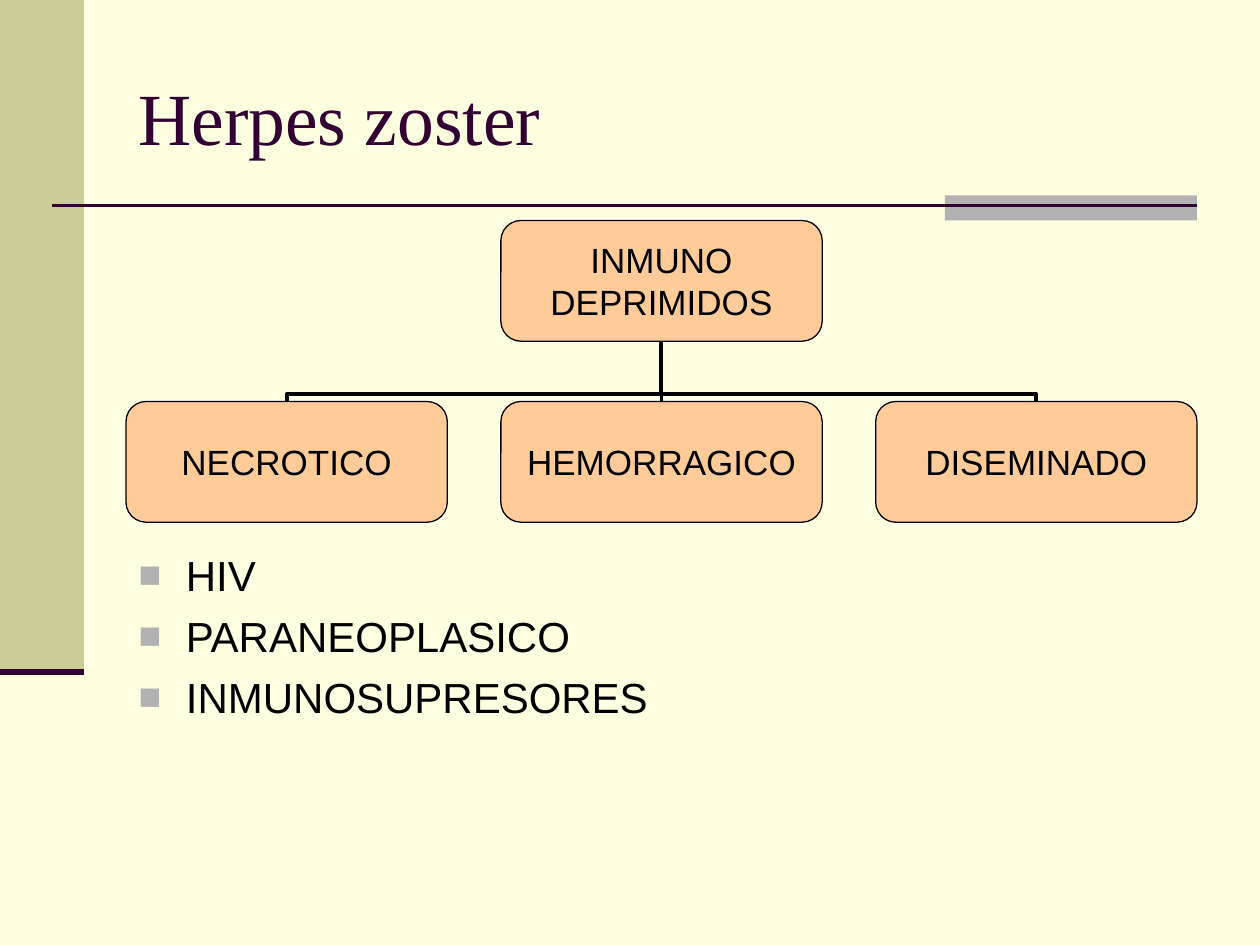
"""Build the Herpes zoster slide with its hierarchy of clinical forms."""
from dataclasses import dataclass

import lxml.etree
import pptx
import pptx.dml.color
import pptx.enum.shapes
import pptx.enum.text
import pptx.oxml.ns
import pptx.util

Pt = pptx.util.Pt
qn = pptx.oxml.ns.qn
Shapes = pptx.enum.shapes.MSO_SHAPE
Connectors = pptx.enum.shapes.MSO_CONNECTOR
Align = pptx.enum.text.PP_ALIGN
Anchor = pptx.enum.text.MSO_ANCHOR


@dataclass(frozen=True)
class Theme:
    """Colours, fonts and type sizes of the slide."""
    background: str = "FFFFE1"
    band: str = "CCCC99"
    accent: str = "B2B2B2"
    plum: str = "330033"
    node: str = "FFCC99"
    ink: str = "000000"
    title_font: str = "Times New Roman"
    body_font: str = "Arial"
    title_size: int = 42
    node_size: int = 20
    list_size: int = 24


@dataclass(frozen=True)
class Box:
    """A rectangle in points."""
    left: float
    top: float
    width: float
    height: float

    @property
    def center(self):
        """Return the horizontal centre."""
        return self.left + self.width / 2

    @property
    def bottom(self):
        """Return the lower edge."""
        return self.top + self.height

    def lengths(self):
        """Return the four measures as lengths."""
        return [Pt(v) for v in (self.left, self.top, self.width, self.height)]


THEME = Theme()


def rgb(value):
    """Turn a hex string into a colour."""
    return pptx.dml.color.RGBColor.from_string(value)


def add_span(para, text, font, size, color):
    """Add one formatted run to a paragraph."""
    span = para.add_run()
    span.text = text
    span.font.name = font
    span.font.size = Pt(size)
    span.font.color.rgb = rgb(color)


def add_block(page, kind, box, fill, line=None):
    """Add a filled shape with an optional thin outline."""
    block = page.shapes.add_shape(kind, *box.lengths())
    block.shadow.inherit = False
    block.fill.solid()
    block.fill.fore_color.rgb = rgb(fill)
    if line:
        block.line.color.rgb = rgb(line)
        block.line.width = Pt(0.75)
    else:
        block.line.fill.background()
    return block


def add_line(page, kind, start, end, color, width):
    """Add a connector without a shadow."""
    line = page.shapes.add_connector(kind, *[Pt(v) for v in (*start, *end)])
    line.line.color.rgb = rgb(color)
    line.line.width = Pt(width)
    lxml.etree.SubElement(line._element.spPr, qn("a:effectLst"))
    return line


def add_branch(page, child, parent):
    """Link the top of a child node to the bottom of its parent."""
    drop = child.top - parent.bottom
    span = abs(child.center - parent.center)
    if span < 1:
        add_line(page, Connectors.STRAIGHT, (child.center, child.top),
                 (parent.center, parent.bottom), THEME.ink, 2.25)
        return
    side = 1 if child.center > parent.center else -1
    x = (child.center + parent.center) / 2
    y = (child.top + parent.bottom) / 2
    elbow = add_line(page, Connectors.ELBOW, (x + side * drop / 2, y - span / 2),
                     (x - side * drop / 2, y + span / 2), THEME.ink, 2.25)
    properties = elbow._element.spPr
    properties.find(qn("a:xfrm")).set("rot", str((90 if side > 0 else 270) * 60000))
    guides = properties.find(qn("a:prstGeom")).get_or_add_avLst()
    lxml.etree.SubElement(guides, qn("a:gd"), name="adj1", fmla="val 12800")


def add_node(page, box, lines):
    """Add one rounded node with centred lines of text."""
    frame = add_block(page, Shapes.ROUNDED_RECTANGLE, box, THEME.node, THEME.ink).text_frame
    frame.word_wrap = False
    frame.vertical_anchor = Anchor.MIDDLE
    frame.margin_left = frame.margin_right = frame.margin_top = frame.margin_bottom = 0
    for index, text in enumerate(lines):
        para = frame.add_paragraph() if index else frame.paragraphs[0]
        para.alignment = Align.CENTER
        add_span(para, text, THEME.body_font, THEME.node_size, THEME.ink)


def add_hierarchy(page, box, root, leaves):
    """Draw a root node above a row of evenly spaced leaves."""
    width, height = box.width * 0.3, box.height * 0.4
    step = (box.width - width) / (len(leaves) - 1)
    parent = Box(box.center - width / 2, box.top, width, height)
    children = [Box(box.left + index * step, box.bottom - height, width, height)
                for index in range(len(leaves))]
    for child in reversed(children):
        add_branch(page, child, parent)
    add_node(page, parent, root)
    for child, text in zip(children, leaves):
        add_node(page, child, [text])


def place(holder, box):
    """Move a placeholder into a box."""
    holder.left, holder.top, holder.width, holder.height = box.lengths()
    holder.text_frame.auto_size = pptx.enum.text.MSO_AUTO_SIZE.NONE
    return holder.text_frame


def add_title(page, box, text):
    """Fill the title placeholder."""
    frame = place(page.shapes.title, box)
    frame.vertical_anchor = Anchor.MIDDLE
    para = frame.paragraphs[0]
    para.alignment = Align.LEFT
    add_span(para, text, THEME.title_font, THEME.title_size, THEME.plum)


def add_list(page, box, items):
    """Fill the body placeholder with square bullets."""
    frame = place(page.placeholders[1], box)
    for index, text in enumerate(items):
        para = frame.add_paragraph() if index else frame.paragraphs[0]
        para.space_before = Pt(6)
        properties = para._p.get_or_add_pPr()
        properties.set("marL", str(Pt(27)))
        properties.set("indent", str(Pt(-27)))
        color = lxml.etree.SubElement(properties, qn("a:buClr"))
        lxml.etree.SubElement(color, qn("a:srgbClr"), val=THEME.accent)
        lxml.etree.SubElement(properties, qn("a:buSzPct"), val="90000")
        lxml.etree.SubElement(properties, qn("a:buFont"), typeface=THEME.body_font)
        lxml.etree.SubElement(properties, qn("a:buChar"), char="■")
        add_span(para, text, THEME.body_font, THEME.list_size, THEME.ink)


def add_decoration(page, box):
    """Draw the side band, the accent bar and the rules."""
    band = Box(box.left, box.top, 48, 384)
    right = box.width - 36
    add_block(page, Shapes.RECTANGLE, band, THEME.band)
    add_block(page, Shapes.RECTANGLE, Box(right - 144, 111.6, 144, 14.4), THEME.accent)
    add_line(page, Connectors.STRAIGHT, (30, 117.5), (right, 117.5), THEME.plum, 1.5)
    add_line(page, Connectors.STRAIGHT, (band.left, band.bottom),
             (band.width, band.bottom), THEME.plum, 3.5)


def main():
    """Build and save the deck."""
    deck = pptx.Presentation()
    deck.slide_width, deck.slide_height = Pt(720), Pt(540)
    page = deck.slides.add_slide(deck.slide_layouts[1])
    page.background.fill.solid()
    page.background.fill.fore_color.rgb = rgb(THEME.background)
    add_decoration(page, Box(0, 0, 720, 540))
    add_title(page, Box(72, 21.6, 612, 90), "Herpes zoster")
    add_hierarchy(page, Box(72, 126, 612, 172.4), ["INMUNO", "DEPRIMIDOS"],
                  ["NECROTICO", "HEMORRAGICO", "DISEMINADO"])
    add_list(page, Box(72, 310.3, 612, 172), ["HIV", "PARANEOPLASICO", "INMUNOSUPRESORES"])
    deck.save("out.pptx")


if __name__ == "__main__":
    main()
